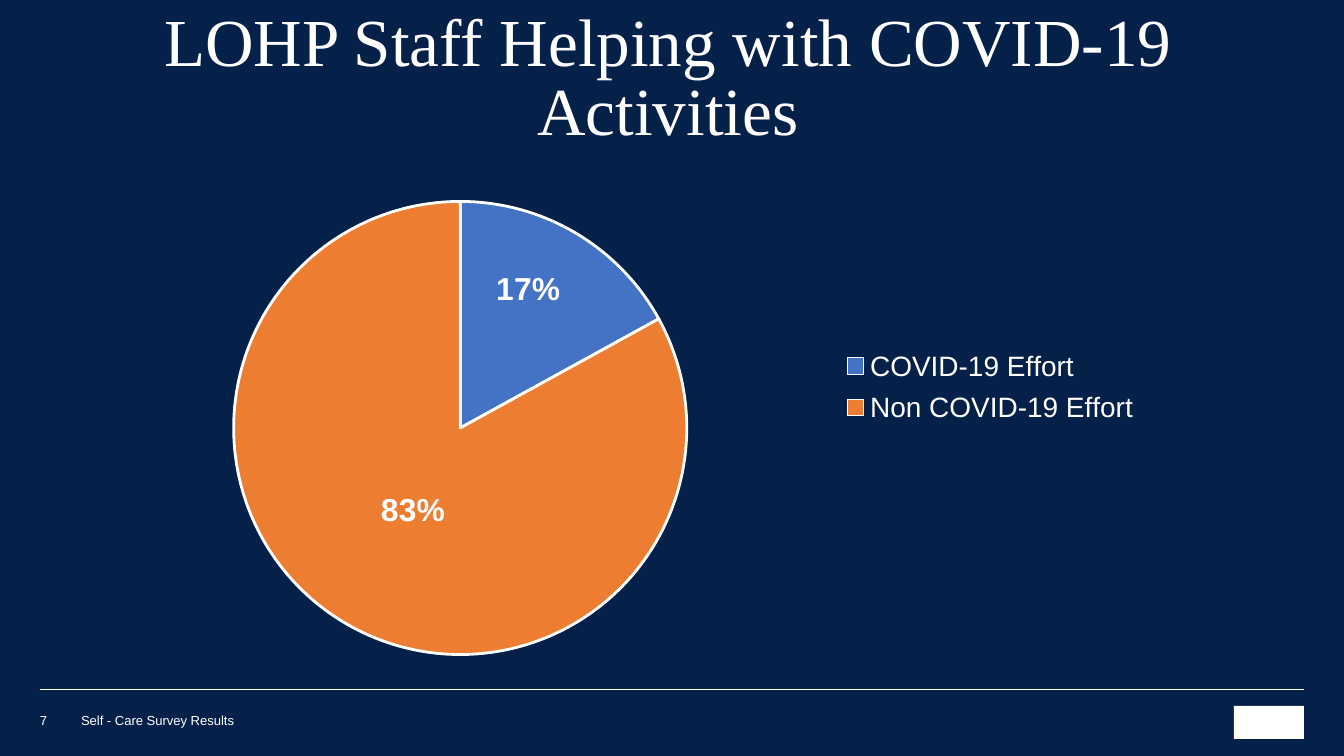
from lxml import etree
from pptx import Presentation
from pptx.chart.data import CategoryChartData
from pptx.dml.color import RGBColor
from pptx.enum.chart import XL_CHART_TYPE, XL_LABEL_POSITION, XL_LEGEND_POSITION
from pptx.enum.shapes import MSO_CONNECTOR, MSO_SHAPE
from pptx.enum.text import MSO_ANCHOR, PP_ALIGN
from pptx.oxml.ns import qn
from pptx.util import Pt

PIE = XL_CHART_TYPE.PIE
LABEL_CENTER = XL_LABEL_POSITION.CENTER
LEGEND_RIGHT = XL_LEGEND_POSITION.RIGHT
STRAIGHT = MSO_CONNECTOR.STRAIGHT
RECTANGLE = MSO_SHAPE.RECTANGLE
BOTTOM = MSO_ANCHOR.BOTTOM
LEFT, CENTER = PP_ALIGN.LEFT, PP_ALIGN.CENTER

PX = 914400 / 134.4
COLORS = {name: RGBColor.from_string(value) for name, value in {
    "navy": "052049", "white": "FFFFFF", "blue": "4472C4", "orange": "ED7D31",
}.items()}


def write_text(sp, text, box, size, font="Arial", align=LEFT, spacing=None, inset=None):
    """Place a text shape at box (px) and fill it with one formatted paragraph."""
    sp.left, sp.top, sp.width, sp.height = [round(v * PX) for v in box]
    tf = sp.text_frame
    tf.word_wrap = True
    tf.vertical_anchor = BOTTOM
    if inset is not None:
        tf.margin_left = tf.margin_top = tf.margin_right = tf.margin_bottom = inset
    p = tf.paragraphs[0]
    p.alignment = align
    p.line_spacing = spacing
    r = p.add_run()
    r.text = text
    r.font.size = Pt(size)
    r.font.name = font
    r.font.color.rgb = COLORS["white"]


def set_layout(parent, index, **values):
    """Give a chart element a manual layout, as fractions of the chart."""
    for old in parent.findall(qn("c:layout")):
        parent.remove(old)
    layout = etree.Element(qn("c:layout"))
    manual = etree.SubElement(layout, qn("c:manualLayout"))
    for tag, value in values.items():
        etree.SubElement(manual, qn(f"c:{tag}")).set("val", str(value))
    parent.insert(index, layout)


prs = Presentation()
prs.slide_width, prs.slide_height = round(1344 * PX), round(756 * PX)
s = prs.slides.add_slide(prs.slide_layouts[5])
s.background.fill.solid()
s.background.fill.fore_color.rgb = COLORS["navy"]

# Footer: rule, plain mark, page number and deck name
rule = s.shapes.add_connector(
    STRAIGHT, *[round(v * PX) for v in (40, 689, 1304, 689)])
rule.line.color.rgb = COLORS["white"]
rule.line.width = Pt(0.25)
etree.SubElement(rule.element.spPr, qn("a:effectLst"))

mark = s.shapes.add_shape(
    RECTANGLE, *[round(v * PX) for v in (1234, 706, 70, 33)])
mark.shadow.inherit = False
mark.fill.solid()
mark.fill.fore_color.rgb = COLORS["white"]
mark.line.fill.background()

for text, box in (("Self - Care Survey Results", (81, 714, 633, 14)),
                  ("7", (40, 711, 36, 17))):
    write_text(s.shapes.add_textbox(0, 0, 0, 0), text, box, 7, inset=0)

write_text(s.shapes.title, "LOHP Staff Helping with COVID-19 Activities",
           (67, 47, 1202, 109), 36, font="Times New Roman", align=CENTER, spacing=0.85)

# Effort pie
data = CategoryChartData(number_format="0%")
data.categories = ["COVID-19 Effort", "Non COVID-19 Effort"]
data.add_series("Series 1", (0.17, 0.83))
chart = s.shapes.add_chart(
    PIE, *[round(v * PX) for v in (137, 150, 1060, 515)], data).chart
chart.has_title = False
chart.font.size = Pt(10)
chart.font.name = "Arial"
chart.font.color.rgb = COLORS["white"]
set_layout(chart.element.find(".//" + qn("c:plotArea")), 0, layoutTarget="inner",
           xMode="edge", yMode="edge", x=0.07, y=0.1, w=0.47, h=0.88)

chart.has_legend = True
legend = chart.legend
legend.position = LEGEND_RIGHT
legend.include_in_layout = False
legend.font.size = Pt(15)
legend.font.name = "Arial"
legend.font.color.rgb = COLORS["white"]
set_layout(chart.element.find(".//" + qn("c:legend")), 1,
           xMode="edge", yMode="edge", x=0.66, y=0.37, w=0.29, h=0.18)

plot = chart.plots[0]
plot.vary_by_categories = True
plot.has_data_labels = True
plot.data_labels.number_format = "0%"
plot.data_labels.number_format_is_linked = False
plot.data_labels.show_value = True

for i, color in enumerate(("blue", "orange")):
    point = plot.series[0].points[i]
    point.format.fill.solid()
    point.format.fill.fore_color.rgb = COLORS[color]
    point.format.line.color.rgb = COLORS["white"]
    point.format.line.width = Pt(1.5)
    label = point.data_label
    label.font.size = Pt(17)
    label.font.bold = True
    label.font.name = "Arial"
    label.font.color.rgb = COLORS["white"]
    label.position = LABEL_CENTER

label_offsets = ((0.01, -0.08), (0.01, -0.03))
for label, (dx, dy) in zip(chart.element.iter(qn("c:dLbl")), label_offsets):
    set_layout(label, 1, x=dx, y=dy)

prs.save("out.pptx")
